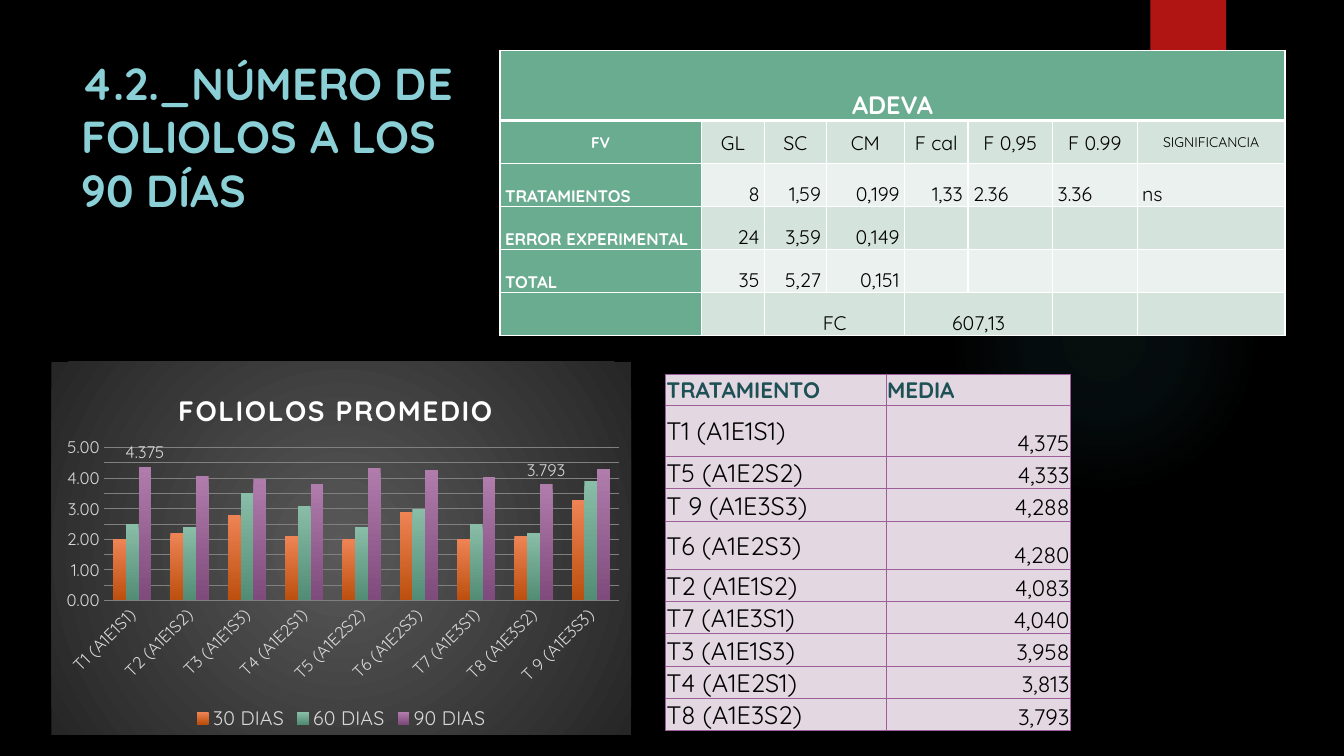
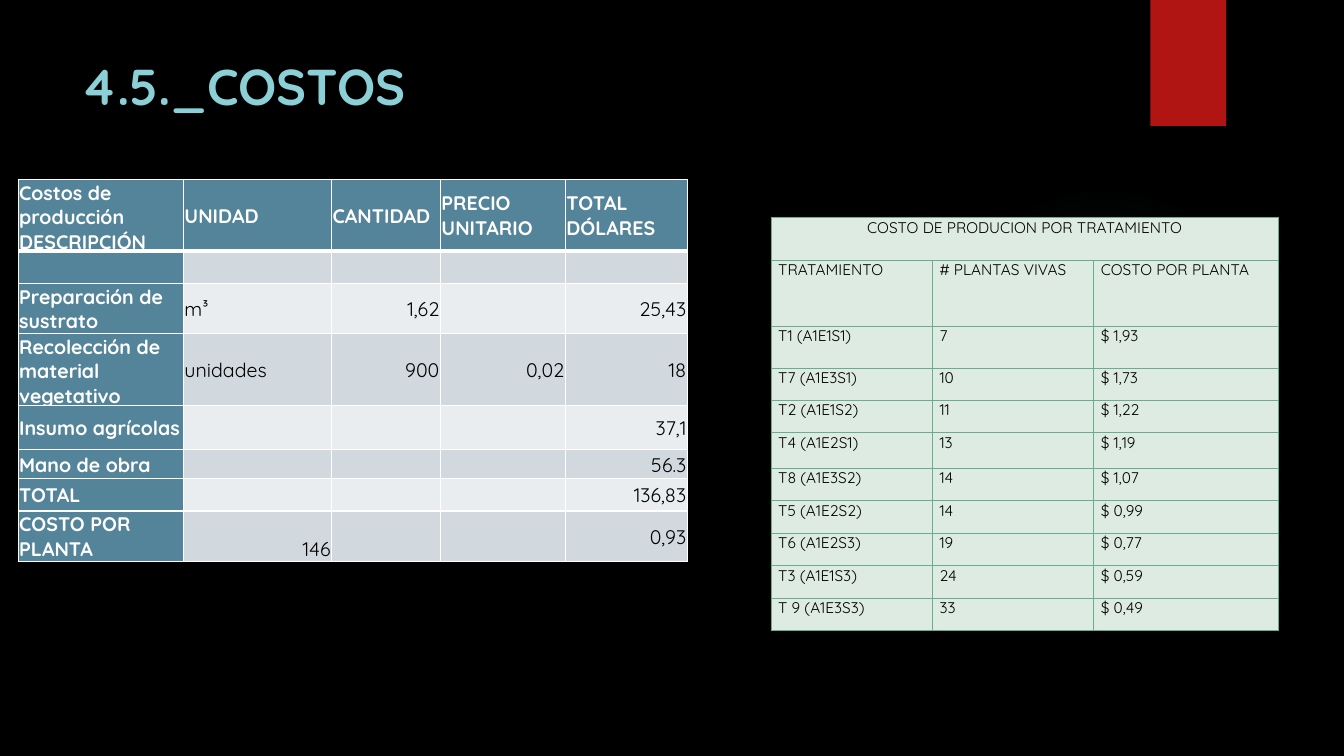
"""Build two slides of field trial results: leaflet counts and costs."""
from copy import deepcopy
from dataclasses import dataclass, replace

from lxml.etree import SubElement as Sub
from pptx import Presentation
from pptx.chart.data import CategoryChartData as Data
from pptx.dml.color import RGBColor as Rgb
from pptx.enum.chart import XL_CHART_TYPE as Kind, XL_LABEL_POSITION as Spot
from pptx.enum.chart import XL_LEGEND_POSITION as Side, XL_TICK_MARK as Tick
from pptx.enum.shapes import MSO_SHAPE as Form
from pptx.enum.text import MSO_ANCHOR as Anchor, PP_ALIGN as Align
from pptx.oxml import parse_xml
from pptx.oxml.ns import nsdecls, qn
from pptx.util import Emu, Inches, Pt


@dataclass(frozen=True)
class Theme:
    font: str = "Quicksand"
    back: str = "000000"
    ink: str = "000000"
    white: str = "FFFFFF"
    title: str = "8AD0D6"
    red: str = "B01513"
    glow: str = "50B9C1"
    teal: str = "1E5155"
    pale: str = "D9D9D9"
    grid: str = "808080"
    plum: str = "9E5E9B"
    lilac: str = "E3D7E1"
    green: str = "6AAC90"
    mint: str = "DDEBE3"
    blue: str = "54849A"
    greens: tuple = ("EBF1EE", "D4E3DB")
    blues: tuple = ("E9EDEF", "D1D9DE")
    panel: tuple = ("595959", "262626")
    bars: tuple = (("EE8455", "BC4F0E"), ("89BDA7", "538C74"), ("AF7CAC", "7F4B7C"))
    tiny: int = 10
    small: int = 11
    note: int = 12
    body: int = 14
    mid: int = 16
    big: int = 18
    chart: int = 20
    long: int = 32
    head: int = 36


@dataclass(frozen=True)
class Face:
    fill: str
    size: int
    ink: str = Theme.ink
    bold: bool = False
    align: Align = Align.LEFT
    anchor: Anchor = Anchor.MIDDLE


@dataclass(frozen=True)
class Frame:
    edge: str
    line: float
    pad: tuple
    thick: bool = False
    loose: bool = False


def blend(stops, radial=True):
    marks = "".join(
        f'<a:gs pos="{pos * 1000}"><a:srgbClr val="{tint}">'
        f'<a:alpha val="{alpha * 1000}"/></a:srgbClr></a:gs>'
        for pos, tint, alpha in stops)
    way = ('<a:path path="circle"><a:fillToRect l="50000" t="50000" r="50000" b="50000"/></a:path>'
           if radial else '<a:lin ang="5400000" scaled="0"/>')
    return parse_xml(f'<a:gradFill {nsdecls("a")}><a:gsLst>{marks}</a:gsLst>{way}</a:gradFill>')


def fade(pair, radial=True):
    return blend([(0, pair[0], 100), (100, pair[1], 100)], radial)


def place(part, index, **spots):
    old = part.find(qn("c:layout"))
    if old is not None:
        part.remove(old)
    lay = parse_xml(f'<c:layout {nsdecls("c")}><c:manualLayout/></c:layout>')
    if "w" in spots:
        Sub(lay[0], qn("c:layoutTarget"), val="inner")
    for axis in "xy":
        Sub(lay[0], qn(f"c:{axis}Mode"), val="edge")
    for name, share in spots.items():
        Sub(lay[0], qn(f"c:{name}"), val=str(share))
    part.insert(index, lay)


class Deck:
    def __init__(self, look):
        self.look = look
        self.file = Presentation()
        self.file.slide_width, self.file.slide_height = Inches(13.33), Inches(7.5)
        self.slide = None

    def area(self, x, y, w, h):
        wide, high = self.file.slide_width, self.file.slide_height
        return [Emu(int(side * part / 100))
                for side, part in ((wide, x), (high, y), (wide, w), (high, h))]

    def type(self, font, size, ink, bold=False):
        font.name, font.size, font.bold = self.look.font, Pt(size), bold
        font.color.rgb = Rgb.from_string(ink)

    def shape(self, form, box):
        item = self.slide.shapes.add_shape(form, *self.area(*box))
        item.shadow.inherit = False
        item.line.fill.background()
        return item

    def page(self, text, width, size):
        look = self.look
        self.slide = self.file.slides.add_slide(self.file.slide_layouts[6])
        back = self.slide.background.fill
        back.solid()
        back.fore_color.rgb = Rgb.from_string(look.back)
        glow = self.shape(Form.OVAL, (70.6, 24.4, 23.1, 41.07))
        glow.fill.background()
        props = glow.element.spPr
        props.replace(props.find(qn("a:noFill")),
                      blend([(0, look.glow, 7), (36, look.glow, 6), (69, look.glow, 0)]))
        flag = self.shape(Form.RECTANGLE, (85.6, 0, 5.63, 16.67))
        flag.fill.solid()
        flag.fill.fore_color.rgb = Rgb.from_string(look.red)
        frame = self.slide.shapes.add_textbox(*self.area(5.33, 6.67, width, 20.4)).text_frame
        frame.word_wrap = True
        frame.text = text
        self.type(frame.paragraphs[0].font, size, look.title, True)

    def table(self, box, cols, rows, cells, face, frame, spans=()):
        area = self.area(*box)
        grid = self.slide.shapes.add_table(len(rows), len(cols), *area).table
        grid.first_row = grid.horz_banding = False
        for col, part in zip(grid.columns, cols):
            col.width = Emu(int(area[2] * part / sum(cols)))
        for row, part in zip(grid.rows, rows):
            row.height = Emu(int(area[3] * part / sum(rows)))
        for r, texts in enumerate(cells):
            for c in range(len(cols)):
                text = texts[c] if c < len(texts) else ""
                self.cell(grid.cell(r, c), text, face(r, c), frame, r)
        for r, first, last in spans:
            grid.cell(r, first).merge(grid.cell(r, last))

    def cell(self, cell, text, face, frame, r):
        cell.fill.solid()
        cell.fill.fore_color.rgb = Rgb.from_string(face.fill)
        pads = [Inches(pad) for pad in frame.pad]
        cell.margin_left, cell.margin_top, cell.margin_right, cell.margin_bottom = pads
        cell.vertical_anchor = face.anchor
        cell.text = text
        para = cell.text_frame.paragraphs[0]
        para.alignment = face.align
        if frame.loose:
            para.line_spacing, para.space_after = 1.07, Pt(4)
        self.type(para.font, face.size, face.ink, face.bold)
        props = cell._tc.get_or_add_tcPr()
        for i, side in enumerate("LRTB"):
            heavy = frame.thick and (r, side) in ((0, "B"), (1, "T"))
            width = Pt(3 if heavy else frame.line)
            props.insert(i, parse_xml(
                f'<a:ln{side} {nsdecls("a")} w="{width}"><a:solidFill>'
                f'<a:srgbClr val="{frame.edge}"/></a:solidFill></a:ln{side}>'))

    def chart(self, box, title, names, series):
        look = self.look
        data = Data()
        data.categories = names
        for name, nums in series:
            data.add_series(name, nums)
        chart = self.slide.shapes.add_chart(
            Kind.COLUMN_CLUSTERED, *self.area(*box), data).chart
        self.type(chart.font, look.tiny, look.white)
        panel = parse_xml(f'<c:spPr {nsdecls("c", "a")}/>')
        panel.append(fade(look.panel))
        root = chart.element
        root.find(qn("c:chart")).addnext(panel)
        chart.has_title = True
        chart.chart_title.text_frame.text = title
        para = chart.chart_title.text_frame.paragraphs[0]
        self.type(para.font, look.chart, look.white, True)
        para.runs[0]._r.get_or_add_rPr().set("spc", "100")
        place(root.find(".//" + qn("c:title")), 1, x=0.21, y=0.06)
        place(root.find(".//" + qn("c:plotArea")), 0, x=0.09, y=0.23, w=0.89, h=0.41)
        chart.has_legend = True
        chart.legend.position = Side.BOTTOM
        chart.legend.include_in_layout = False
        self.type(chart.legend.font, look.body, look.pale)
        for axis in (chart.category_axis, chart.value_axis):
            axis.major_tick_mark = axis.minor_tick_mark = Tick.NONE
            axis.format.line.fill.background()
            self.type(axis.tick_labels.font, look.note, look.pale)
        chart.category_axis._element.find(".//" + qn("a:bodyPr")).set("rot", "-2700000")
        axis = chart.value_axis
        axis.minimum_scale, axis.maximum_scale = 0, 5
        axis.major_unit, axis.minor_unit = 1, 0.5
        axis.tick_labels.number_format = "0.00"
        axis.tick_labels.number_format_is_linked = False
        axis.has_major_gridlines = axis.has_minor_gridlines = True
        line = axis.major_gridlines.format.line
        line.width = Pt(0.75)
        line.color.rgb = Rgb.from_string(look.grid)
        major, minor = (axis._element.find(qn(f"c:{rank}Gridlines"))
                        for rank in ("major", "minor"))
        minor.append(deepcopy(major.find(qn("c:spPr"))))
        plot = chart.plots[0]
        plot.gap_width, plot.overlap, plot.vary_by_categories = 150, 0, False
        for bars, pair in zip(plot.series, look.bars):
            bars.invert_if_negative = False
            bars._element.get_or_add_spPr().append(fade(pair, False))
        last = plot.series[-1]
        last.data_labels.show_value = False
        for i in (0, 7):
            label = last.points[i].data_label
            label.position = Spot.OUTSIDE_END
            self.type(label.font, look.note, look.pale)


def main():
    look = Theme()
    deck = Deck(look)
    names = [f"T{n} (A1E{(n + 2) // 3}S{(n - 1) % 3 + 1})" for n in range(1, 9)]
    names.append("T 9 (A1E3S3)")

    def banded(tint, bands, r, c):
        if r == 0 or c == 0:
            return Face(tint, look.body, look.white, True)
        return Face(bands[r % 2], look.body)

    def mean_face(r, c):
        if r == 0:
            return Face(look.lilac, look.mid, look.teal, True)
        if c == 0:
            return Face(look.lilac, look.big)
        return Face(look.lilac, look.mid, align=Align.RIGHT, anchor=Anchor.BOTTOM)

    def test_face(r, c):
        face = banded(look.green, look.greens, r, c)
        if r == 1:
            size = {0: look.small, 7: look.tiny}.get(c, look.body)
            return replace(face, size=size, align=Align.CENTER)
        face = replace(face, anchor=Anchor.BOTTOM)
        if r == 0:
            return replace(face, size=look.big, align=Align.CENTER)
        if c == 0:
            return replace(face, size=look.note)
        if r == 5:
            return replace(face, align=Align.CENTER)
        return replace(face, align=Align.RIGHT if c < 5 else Align.LEFT)

    def cost_face(r, c):
        face = banded(look.blue, look.blues, r, c)
        if r == 7 and c == 1:
            return replace(face, align=Align.RIGHT, anchor=Anchor.BOTTOM)
        return replace(face, align=Align.RIGHT) if r and c > 1 else face

    def plant_face(r, c):
        return Face(look.mint, look.small, align=Align.LEFT if r else Align.CENTER,
                    anchor=Anchor.TOP)

    tight = (0.01, 0.01, 0.01, 0)
    deck.page("4.2._NÚMERO DE FOLIOLOS A LOS \v90 DÍAS", 35.63, look.long)
    means = [4.375, 4.083, 3.958, 3.813, 4.333, 4.28, 4.04, 3.793, 4.288]
    ranks = sorted(zip(means, names), reverse=True)
    deck.table((49.5, 49.47, 30.15, 47.2), (2.19, 1.83),
               (0.31, 0.51, 0.32, 0.32, 0.48) + (0.32,) * 5,
               [("TRATAMIENTO", "MEDIA")]
               + [(name, f"{mean:.3f}".replace(".", ",")) for mean, name in ranks],
               mean_face, Frame(look.plum, 0.75, tight))
    deck.chart((3.83, 47.87, 43.13, 49.33), "FOLIOLOS PROMEDIO", names, (
        ("30 DIAS", (2, 2.2, 2.8, 2.1, 2, 2.9, 2, 2.1, 3.3)),
        ("60 DIAS", (2.5, 2.4, 3.5, 3.1, 2.4, 3, 2.5, 2.2, 3.9)),
        ("90 DIAS", means)))
    deck.table((37.2, 6.67, 58.43, 37.73),
               (2, 0.63, 0.61, 0.78, 0.63, 0.84, 0.84, 1.47), (0.7,) + (0.43,) * 5, (
        ("ADEVA",),
        ("FV", "GL", "SC", "CM", "F cal", "F 0,95", "F 0.99", "SIGNIFICANCIA"),
        ("TRATAMIENTOS", "8", "1,59", "0,199", "1,33", "2.36", "3.36", "ns"),
        ("ERROR EXPERIMENTAL", "24", "3,59", "0,149"),
        ("TOTAL", "35", "5,27", "0,151"),
        ("", "", "FC", "", "607,13")),
        test_face, Frame(look.white, 1, (0.05, 0, 0.05, 0), True, True),
        ((0, 0, 7), (5, 2, 3), (5, 4, 5)))

    deck.page("4.5._COSTOS", 77.18, look.head)
    deck.table((1.35, 23.73, 49.8, 48.27), (1.64, 1.47, 1.08, 1.24, 1.21),
               (0.65, 0.32, 0.5, 0.6, 0.44, 0.29, 0.32, 0.5), (
        ("Costos de producción DESCRIPCIÓN", "UNIDAD", "CANTIDAD",
         "PRECIO UNITARIO", "TOTAL DÓLARES"),
        (),
        ("Preparación de sustrato", "m³", "1,62", "", "25,43"),
        ("Recolección de material vegetativo", "unidades", "900", "0,02", "18"),
        ("Insumo agrícolas", "", "", "", "37,1"),
        ("Mano de obra", "", "", "", "56.3"),
        ("TOTAL", "", "", "", "136,83"),
        ("COSTO POR PLANTA", "146", "", "", "0,93")),
        cost_face, Frame(look.white, 1, tight, True))
    plants = ((1, 7, "1,93"), (7, 10, "1,73"), (2, 11, "1,22"), (4, 13, "1,19"),
              (8, 14, "1,07"), (5, 14, "0,99"), (6, 19, "0,77"), (3, 24, "0,59"),
              (9, 33, "0,49"))
    deck.table((57.38, 28.8, 37.73, 54.67), (1.6, 1.6, 1.83),
               (0.42, 0.65, 0.41, 0.32, 0.32, 0.35) + (0.32,) * 5,
               [("COSTO DE PRODUCION POR TRATAMIENTO",),
                ("TRATAMIENTO", "# PLANTAS VIVAS", "COSTO POR PLANTA")]
               + [(names[n - 1], str(live), f"$ {cost}") for n, live, cost in plants],
               plant_face, Frame(look.green, 0.75, (0.07, 0, 0.07, 0)), ((0, 0, 2),))
    deck.file.save("out.pptx")


if __name__ == "__main__":
    main()
